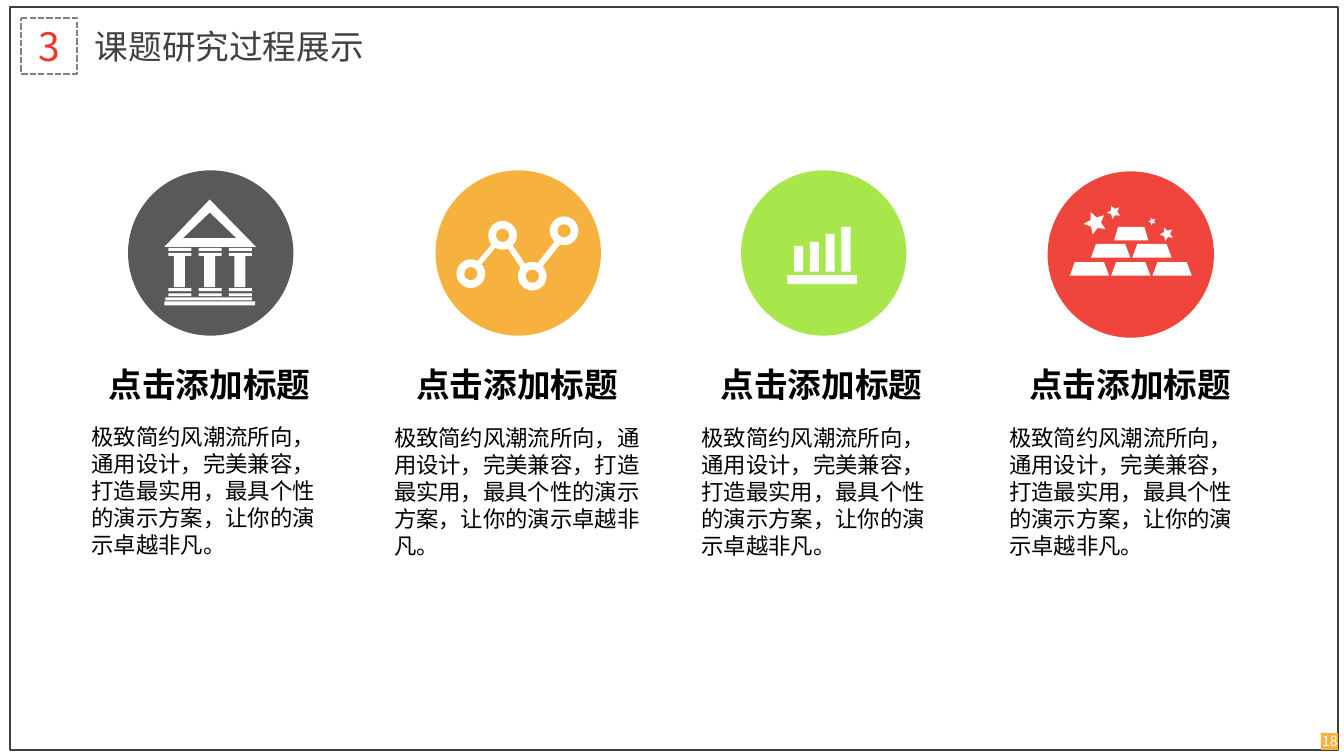
import math
from dataclasses import dataclass

from lxml import etree
from pptx import Presentation
from pptx import util as u
from pptx.dml.color import RGBColor
from pptx.enum import dml, shapes, text
from pptx.oxml import ns

COLUMNS, ROWS = 133.3, 75
RECT = shapes.MSO_SHAPE.RECTANGLE
ROUND = shapes.MSO_SHAPE.ROUNDED_RECTANGLE
OVAL = shapes.MSO_SHAPE.OVAL


@dataclass(frozen=True)
class Theme:
    font: str = "Noto Sans CJK SC"
    ink: str = "000000"
    dark: str = "404040"
    dash: str = "808080"
    accent: str = "ED382D"
    white: str = "FFFFFF"
    stone: str = "FFFBFF"
    grey: str = "595959"
    orange: str = "F7B13F"
    green: str = "A8E74B"
    red: str = "EF453D"
    number: int = 28
    heading: int = 24
    body: int = 16
    small: int = 10


@dataclass(frozen=True)
class Topic:
    circle: tuple
    color: str
    heading_left: float
    body: tuple
    icon: str


def write(shape, words, theme, size, color, bold=None, align=text.PP_ALIGN.LEFT,
          anchor=text.MSO_ANCHOR.TOP, wrap=True, grow=False, inset=None):
    frame = shape.text_frame
    frame.word_wrap = wrap
    frame.auto_size = (text.MSO_AUTO_SIZE.SHAPE_TO_FIT_TEXT if grow
                       else text.MSO_AUTO_SIZE.NONE)
    frame.vertical_anchor = anchor
    if inset is not None:
        frame.margin_left = frame.margin_right = u.Inches(inset)
        frame.margin_top = frame.margin_bottom = u.Inches(inset)
    para = frame.paragraphs[0]
    para.alignment = align
    span = para.add_run()
    span.text = words
    span.font.size = u.Pt(size)
    span.font.bold = bold
    span.font.color.rgb = RGBColor.from_string(color)
    span.font.name = theme.font
    east = etree.SubElement(span.font._element, ns.qn("a:ea"))
    east.set("typeface", theme.font)


class Page:
    def __init__(self, deck, theme):
        self.theme = theme
        self.column = deck.slide_width / COLUMNS
        self.row = deck.slide_height / ROWS
        self.slide = deck.slides.add_slide(deck.slide_layouts[5])
        self.canvas = self.slide.shapes

    def place(self, left, top, width, height):
        return (round(left * self.column), round(top * self.row),
                round(width * self.column), round(height * self.row))

    def group(self):
        self.canvas = self.slide.shapes.add_group_shape().shapes

    def ungroup(self):
        self.canvas = self.slide.shapes

    def paint(self, shape, fill=None, line=None, weight=1, dash=None):
        shape.shadow.inherit = False
        if fill:
            shape.fill.solid()
            shape.fill.fore_color.rgb = RGBColor.from_string(fill)
        else:
            shape.fill.background()
        if line:
            shape.line.color.rgb = RGBColor.from_string(line)
            shape.line.width = u.Pt(weight)
            if dash:
                shape.line.dash_style = dash
        else:
            shape.line.fill.background()
        return shape

    def shape(self, kind, area, **style):
        return self.paint(self.canvas.add_shape(kind, *self.place(*area)), **style)

    def outline(self, points, fill):
        spots = [(round(x * self.column), round(y * self.row)) for x, y in points]
        builder = self.canvas.build_freeform(*spots[0])
        builder.add_line_segments(spots[1:], close=True)
        return self.paint(builder.convert_to_shape(), fill=fill)

    def title(self, words, area, **style):
        box = self.slide.shapes.title
        box.left, box.top, box.width, box.height = self.place(*area)
        write(box, words, self.theme, **style)

    def label(self, words, area, **style):
        write(self.canvas.add_textbox(*self.place(*area)), words, self.theme, **style)


def draw_temple(page, color):
    theme = page.theme
    page.outline([(16.3, 24.5), (20.8, 19.8), (25.4, 24.5)], theme.white)
    page.outline([(18.2, 23.6), (20.8, 21.1), (23.4, 23.6)], color)
    for column in range(3):
        for top in (24.6, 25.1, 28.6, 29.1):
            page.shape(RECT, (16.7 + 3 * column, top, 2.3, 0.3), fill=theme.stone)
        page.shape(RECT, (17.25 + 3 * column, 25.4, 1.1, 3.1), fill=theme.stone)
    page.shape(RECT, (16.4, 29.5, 8.6, 0.3), fill=theme.stone)
    page.shape(RECT, (16.3, 29.9, 9, 0.4), fill=theme.stone)


def draw_network(page, color):
    white = page.theme.white
    links = [
        [(56.4, 23.2), (52.8, 27.7), (52.3, 27.4), (55.9, 22.8)],
        [(52.6, 28), (49.4, 23.2), (49.9, 22.9), (53.1, 27.7)],
        [(45.6, 28), (49.3, 23.6), (49.7, 23.9), (46, 28.3)],
    ]
    for link in links:
        page.outline(link, white)
    for x, y in ((46.7, 27.15), (49.85, 23.35), (52.8, 27.4), (55.95, 22.9)):
        for size, fill in ((2.85, white), (1.3, color)):
            page.shape(OVAL, (x - size / 2, y - size / 2, size, size), fill=fill)


def draw_bars(page, color):
    white = page.theme.white
    page.shape(RECT, (78.1, 27.3, 6.9, 0.9), fill=white)
    for index, top in enumerate((24.4, 24, 23.2, 22.5)):
        page.shape(RECT, (78.75 + 1.57 * index, top, 0.9, 26.95 - top), fill=white)


def draw_gold(page, color):
    white = page.theme.white
    for x, y, radius in ((108.64, 22.12, 1.16), (115.72, 23.22, 0.7),
                         (114.28, 21.96, 0.38), (110.48, 21.04, 0.7)):
        points = []
        for step in range(10):
            reach = radius * (0.48 if step % 2 else 1)
            angle = math.radians(31 + 36 * step)
            points.append((x + reach * math.cos(angle), y + reach * math.sin(angle)))
        page.outline(points, white)
    for count, left, top, width, slope in ((1, 110.5, 22.5, 3.4, 0.4),
                                           (2, 108.2, 24.2, 3.9, 0.5),
                                           (3, 106.1, 26, 3.9, 0.5)):
        for index in range(count):
            start = left + 4.1 * index
            end = start + width
            page.outline([(start + slope, top), (end - slope, top),
                          (end, top + 1.35), (start, top + 1.35)], white)


def main():
    deck = Presentation()
    deck.slide_width, deck.slide_height = u.Inches(13.33), u.Inches(7.5)
    theme = Theme()
    page = Page(deck, theme)
    middle, center = text.MSO_ANCHOR.MIDDLE, text.PP_ALIGN.CENTER

    page.shape(RECT, (1, 0.7, 131.7, 73.7), line=theme.dark)
    badge = page.shape(ROUND, (2.1, 1.8, 5.5, 5.5), line=theme.dash, weight=1.5,
                       dash=dml.MSO_LINE.SQUARE_DOT)
    badge.adjustments[0] = 0
    write(badge, "3", theme, size=theme.number, color=theme.accent,
          align=center, anchor=middle, inset=0)
    page.title("课题研究过程展示", (8.4, 1.8, 35.9, 5.5), size=theme.heading,
               color=theme.dark, anchor=middle)
    page.shape(RECT, (131, 72.7, 1.7, 1.7), fill=theme.orange)
    page.label("18", (129.7, 72.7, 4.4, 1.7), size=theme.small, color=theme.white,
               align=center, anchor=middle)

    icons = {"temple": draw_temple, "network": draw_network,
             "bars": draw_bars, "gold": draw_gold}
    topics = [
        Topic((12.7, 16.9, 16.4, 16.4), theme.grey, 9.8, (8.1, 41.5, 25.6, 14.5), "temple"),
        Topic((43.2, 16.9, 16.4, 16.4), theme.orange, 40.3, (38.1, 41.6, 26.4, 14.5), "network"),
        Topic((73.5, 16.9, 16.4, 16.4), theme.green, 70.5, (68.6, 41.6, 26.1, 14.5), "bars"),
        Topic((103.9, 17, 16.5, 16.5), theme.red, 101.1, (99.1, 41.6, 26.1, 14.5), "gold"),
    ]
    for topic in topics:
        page.group()
        page.shape(OVAL, topic.circle, fill=topic.color)
        icons[topic.icon](page, topic.color)
        page.ungroup()
        page.label("点击添加标题", (topic.heading_left, 35.6, 22.2, 5.1),
                   size=theme.heading, color=theme.ink, bold=True, wrap=False, grow=True)
        page.label("极致简约风潮流所向，通用设计，完美兼容，打造最实用，最具个性的演示方案，"
                   "让你的演示卓越非凡。", topic.body,
                   size=theme.body, color=theme.ink, grow=True)
    deck.save("out.pptx")


if __name__ == "__main__":
    main()
